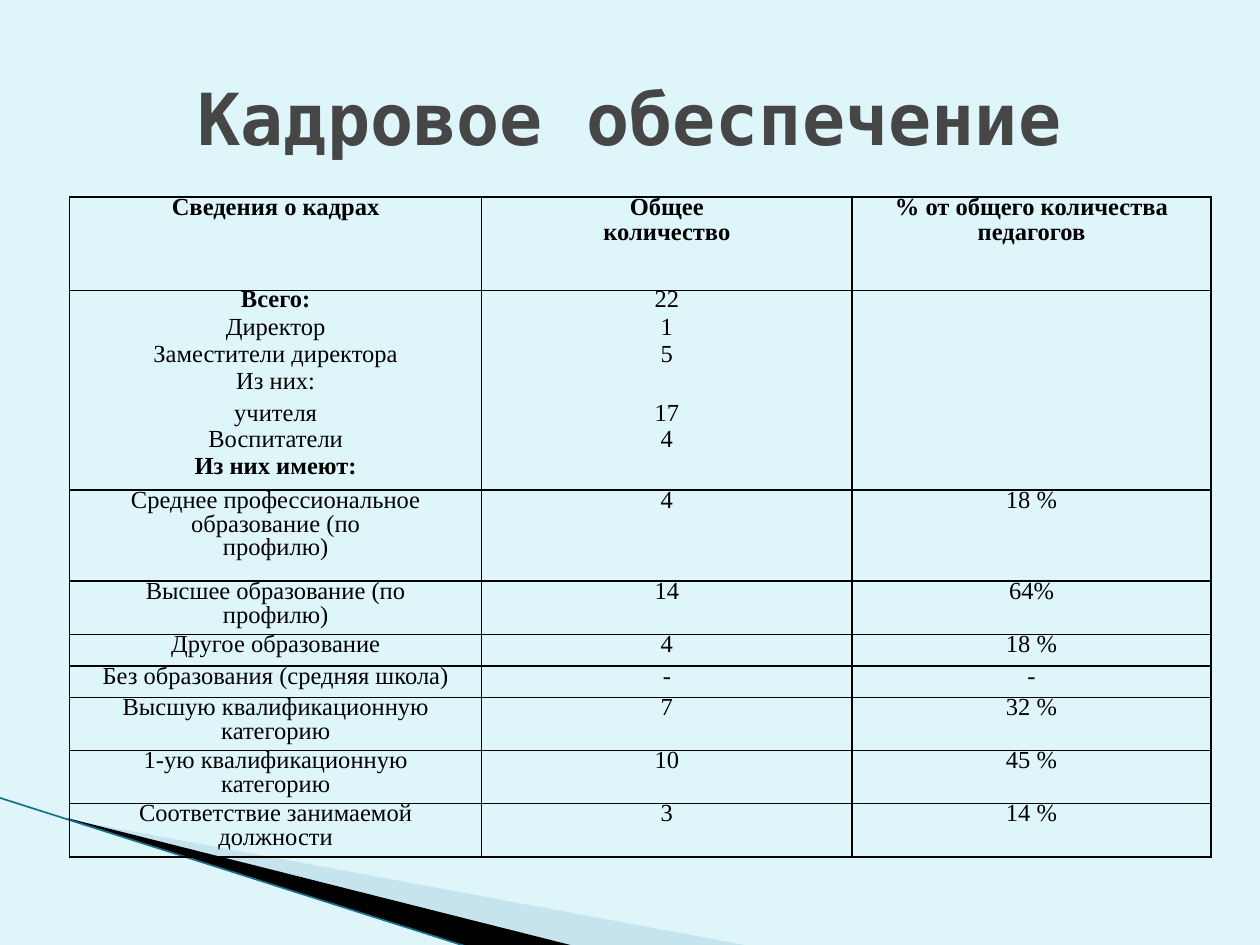
import lxml.etree
import pptx
import pptx.dml.color
import pptx.enum.shapes
import pptx.enum.text
import pptx.oxml.ns
import pptx.util

Pt = pptx.util.Pt
qn = pptx.oxml.ns.qn

COLORS = {
    "background": "DEF5FA",
    "title": "464646",
    "text": "000000",
    "border": "000000",
    "pale_wedge": "A0CBDC",
    "dark_wedge": "000000",
    "edge": "16708C",
}
TITLE_FONT = "DejaVu Sans Mono"
TABLE_FONT = "Times New Roman"
TABLE_SIZE = 14

COLUMN_WIDTHS = [235.5, 211.6, 205.2]
COLUMN_INDENTS = [16, 65.5, 17]
STAFF_ROWS = range(1, 8)  # rows that read as one block, without inner rules
BOLD_LABELS = {"Всего:", "Из них имеют:"}

# row height, line spacing, cells
ROWS = [
    (53.3, 13.8, ["Сведения о кадрах", "Общее количество", "% от общего количества педагогов"]),
    (16.6, 12.7, ["Всего:", "22", ""]),
    (15.3, 12.2, ["Директор", "1", ""]),
    (15.3, 12.3, ["Заместители директора", "5", ""]),
    (18.3, 12.3, ["Из них:", "", ""]),
    (15.3, 12.3, ["учителя", "17", ""]),
    (15.3, 12.3, ["Воспитатели", "4", ""]),
    (18.2, 12.5, ["Из них имеют:", "", ""]),
    (52, 13.5, ["Среднее профессиональное образование (по\nпрофилю)", "4", "18 %"]),
    (30.4, 13.5, ["Высшее образование (по профилю)", "14", "64%"]),
    (18, 13.5, ["Другое образование", "4", "18 %"]),
    (18, 13.5, ["Без образования (средняя школа)", "-", "-"]),
    (30.4, 13.5, ["Высшую квалификационную категорию", "7", "32 %"]),
    (30.4, 13.6, ["1-ую квалификационную категорию", "10", "45 %"]),
    (30.4, 13.5, ["Соответствие занимаемой должности", "3", "14 %"]),
]


def rgb(name):
    return pptx.dml.color.RGBColor.from_string(COLORS[name])


class SlideBuilder:
    def __init__(self, slide):
        self.slide = slide

    def background(self, color):
        fill = self.slide.background.fill
        fill.solid()
        fill.fore_color.rgb = rgb(color)

    def add_run(self, paragraph, text, font, size, color, bold):
        run = paragraph.add_run()
        run.text = text
        run.font.name = font
        run.font.size = Pt(size)
        run.font.bold = bold
        run.font.color.rgb = rgb(color)

    def title(self, text, left, top, width, height):
        title = self.slide.shapes.title
        title.left, title.top = Pt(left), Pt(top)
        title.width, title.height = Pt(width), Pt(height)
        frame = title.text_frame
        frame.vertical_anchor = pptx.enum.text.MSO_ANCHOR.MIDDLE
        paragraph = frame.paragraphs[0]
        paragraph.alignment = pptx.enum.text.PP_ALIGN.CENTER
        self.add_run(paragraph, text, TITLE_FONT, 41, "title", True)

    def wedge(self, points, frame, color, alpha=100):
        """Draw a filled outline whose points may reach beyond its frame."""
        start, *rest = [(Pt(x), Pt(y)) for x, y in points]
        builder = self.slide.shapes.build_freeform(*start)
        builder.add_line_segments(rest, close=True)
        shape = builder.convert_to_shape()
        left, top, width, height = map(Pt, frame)
        shift_x, shift_y = shape.left - left, shape.top - top
        shape.left, shape.top, shape.width, shape.height = left, top, width, height
        for outline in shape._element.iter(qn("a:path")):
            outline.set("w", str(width))
            outline.set("h", str(height))
            for point in outline.iter(qn("a:pt")):
                point.set("x", str(int(point.get("x")) + shift_x))
                point.set("y", str(int(point.get("y")) + shift_y))
        shape.shadow.inherit = False
        shape.line.fill.background()
        shape.fill.solid()
        shape.fill.fore_color.rgb = rgb(color)
        if alpha < 100:
            fill_color = shape.fill._xPr.find(qn("a:solidFill"))[0]
            lxml.etree.SubElement(fill_color, qn("a:alpha"), val=str(alpha * 1000))

    def line(self, x1, y1, x2, y2, color, width):
        connector = self.slide.shapes.add_connector(
            pptx.enum.shapes.MSO_CONNECTOR.STRAIGHT, Pt(x1), Pt(y1), Pt(x2), Pt(y2))
        connector.line.color.rgb = rgb(color)
        connector.line.width = Pt(width)
        lxml.etree.SubElement(connector._element.spPr, qn("a:effectLst"))

    def cell_borders(self, cell, sides):
        """Draw the named sides and switch the others off."""
        properties = cell._tc.get_or_add_tcPr()
        for side in "LRTB":
            border = lxml.etree.SubElement(properties, qn(f"a:ln{side}"), w=str(Pt(1)))
            if side in sides:
                fill = lxml.etree.SubElement(border, qn("a:solidFill"))
                lxml.etree.SubElement(fill, qn("a:srgbClr"), val=COLORS["border"])
            else:
                lxml.etree.SubElement(border, qn("a:noFill"))

    def cell_text(self, cell, text, spacing, indent, bold):
        frame = cell.text_frame
        for index, part in enumerate(text.split("\n")):
            paragraph = frame.add_paragraph() if index else frame.paragraphs[0]
            paragraph.alignment = pptx.enum.text.PP_ALIGN.CENTER
            paragraph.line_spacing = Pt(spacing)
            properties = paragraph._p.get_or_add_pPr()
            for margin in ("marL", "marR"):
                properties.set(margin, str(Pt(indent)))
            if part:
                self.add_run(paragraph, part, TABLE_FONT, TABLE_SIZE, "text", bold)
            else:
                lxml.etree.SubElement(
                    paragraph._p, qn("a:endParaRPr"), sz=str(TABLE_SIZE * 100))

    def table(self, left, top):
        heights = [height for height, _, _ in ROWS]
        table = self.slide.shapes.add_table(
            len(ROWS), len(COLUMN_WIDTHS), Pt(left), Pt(top),
            Pt(sum(COLUMN_WIDTHS)), Pt(sum(heights))).table
        table.first_row = table.horz_banding = False
        for column, width in zip(table.columns, COLUMN_WIDTHS):
            column.width = Pt(width)
        for r, (height, spacing, texts) in enumerate(ROWS):
            table.rows[r].height = Pt(height)
            sides = "LR"
            if r not in STAFF_ROWS[1:]:
                sides += "T"
            if r not in STAFF_ROWS[:-1]:
                sides += "B"
            for c, text in enumerate(texts):
                cell = table.cell(r, c)
                cell.margin_left = cell.margin_right = 0
                cell.margin_top = cell.margin_bottom = 0
                self.cell_borders(cell, sides)
                cell.fill.background()
                indent = COLUMN_INDENTS[c] if len(text) > 1 else 0.5
                self.cell_text(cell, text, spacing, indent, r == 0 or text in BOLD_LABELS)
        last = len(COLUMN_WIDTHS) - 1
        table.cell(STAFF_ROWS[0], last).merge(table.cell(STAFF_ROWS[-1], last))


def main():
    presentation = pptx.Presentation()
    presentation.slide_width, presentation.slide_height = Pt(720), Pt(540)
    builder = SlideBuilder(presentation.slides.add_slide(presentation.slide_layouts[5]))
    builder.background("background")
    builder.wedge([(39.6, 468.4), (428.4, 540.5), (328.3, 540.5), (39.6, 468)],
                  (56.2, 393.8, 299.5, 113.8), "pale_wedge", 40)
    builder.wedge([(38.5, 467.5), (328, 540.5), (268, 541), (39, 468)],
                  (-4.3, 455.8, 299.5, 66.2), "dark_wedge")
    builder.line(-0.5, 455.8, 267, 541, "edge", 0.95)
    builder.title("Кадровое обеспечение", 36, 21.6, 648, 90)
    builder.table(39.8, 112.6)
    presentation.save("out.pptx")


if __name__ == "__main__":
    main()
